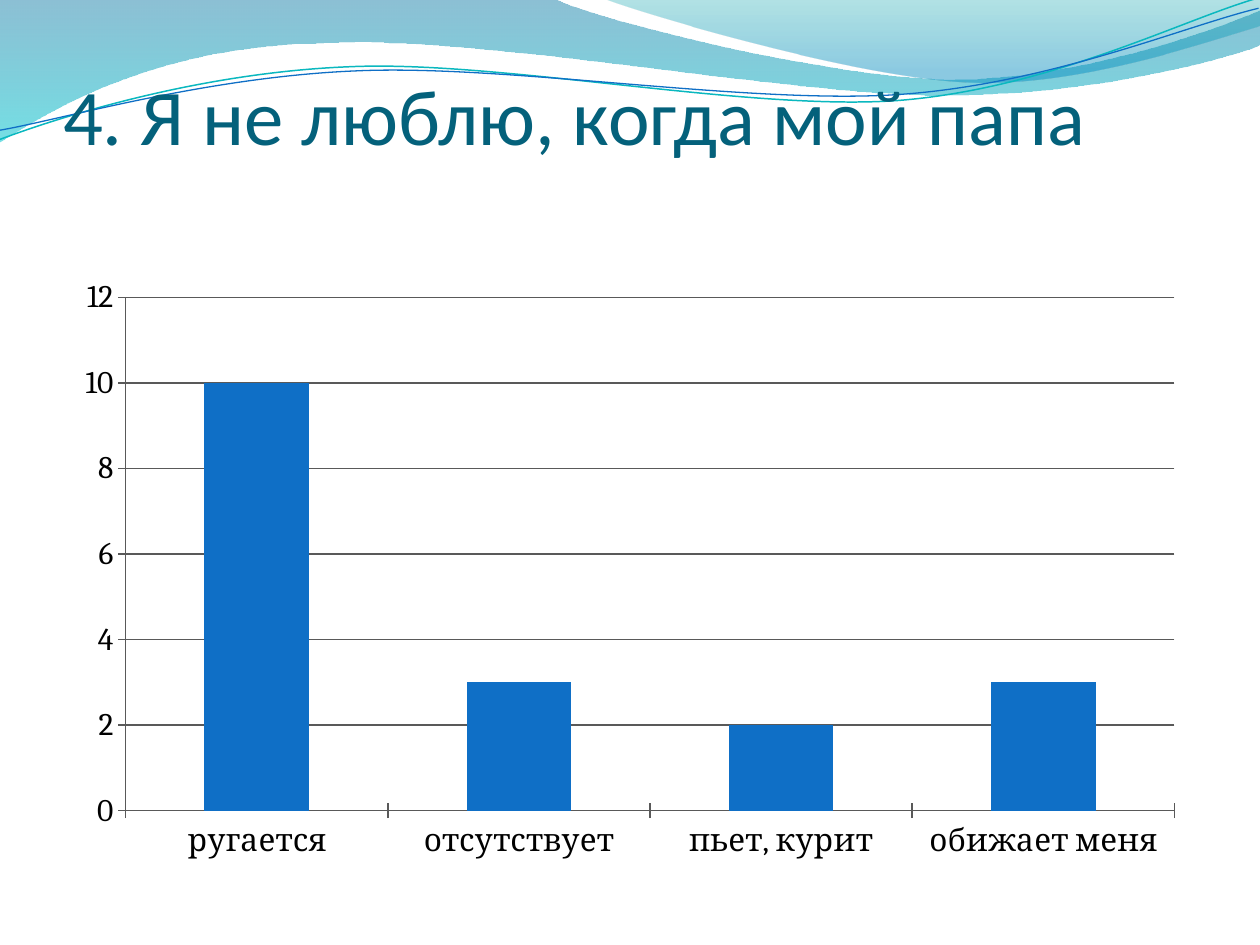
from math import cos, radians, sin

from lxml.etree import SubElement
from pptx import Presentation
from pptx.chart.data import CategoryChartData
from pptx.dml.color import RGBColor
from pptx.enum.chart import XL_CHART_TYPE as ChartType, XL_TICK_MARK as TickMark
from pptx.enum.text import MSO_ANCHOR as Anchor, MSO_AUTO_SIZE as AutoSize, PP_ALIGN as Align
from pptx.oxml.ns import qn
from pptx.util import Emu, Pt

EMU_PER_PX = 914400 / 126
SLIDE_WIDTH, SLIDE_HEIGHT = 1260, 945
CURVE_TILT = -2.7
COLORS = {
    "title": "04617B",
    "bar": "0F6FC6",
    "text": "000000",
    "grid": "595959",
    "deep_blue": "0074A1",
    "aqua": "00C6CF",
    "teal": "00A1A9",
    "blue": "008BBF",
    "teal_line": "0AB8BF",
    "blue_line": "0F6FC6",
}
LEFT_WAVE = [
    [(0, 0)], [(554, -1)],
    [(600, 21), (837, 79), (955, 79)], [(1075, 79), (1207, 33), (1260, 11)],
    [(1261, 45)],
    [(1239, 55), (1096, 96), (940, 95)], [(784, 95), (481, 35), (324, 43)],
    [(163, 45), (58, 105), (-1, 142)], [(0, 0)],
]
RIGHT_WAVE = [
    [(604, -1)], [(641, 14), (859, 78), (969, 82)],
    [(1079, 87), (1211, 40), (1260, 26)], [(1260, 0)], [(604, -1)],
]
TEAL_CURVE = [
    [(0, 140)], [(60, 117), (199, 72), (349, 66)],
    [(498, 59), (747, 112), (898, 101)], [(1050, 89), (1182, 19), (1257, -3)],
]
BLUE_CURVE = [
    [(0, 131)], [(59, 121), (207, 77), (357, 71)],
    [(508, 64), (752, 106), (903, 95)], [(1053, 84), (1186, 26), (1260, 8)],
]


def px(length):
    """Turn pixels into EMU."""
    return Emu(round(length * EMU_PER_PX))


def rgb(name):
    """Return a named colour."""
    return RGBColor.from_string(COLORS[name])


def place(shape, box):
    """Move and size a shape to a box."""
    shape.left, shape.top, shape.width, shape.height = map(px, box)


def turn(point, center, degrees):
    """Turn a point clockwise about a center."""
    angle = radians(degrees)
    x, y = point[0] - center[0], point[1] - center[1]
    return (center[0] + x * cos(angle) - y * sin(angle),
            center[1] + x * sin(angle) + y * cos(angle))


def bend(shape, segments):
    """Join each run of three line segments into one cubic curve."""
    lines = iter(list(shape._element.iter(qn("a:lnTo"))))
    for segment in segments:
        first, *others = [next(lines) for _ in segment]
        if others:
            curve = first.makeelement(qn("a:cubicBezTo"))
            first.addprevious(curve)
            for line in (first, *others):
                curve.append(line[0])
                line.getparent().remove(line)


def add_outline(slide, box, outline, close, rotation=0):
    """Add a freeform of straight and curved segments that fills the box."""
    left, top, width, height = box
    center = (left + width / 2, top + height / 2)
    points = [turn(point, center, -rotation) for segment in outline for point in segment]
    corners = [(px(x), px(y)) for x, y in points]
    builder = slide.shapes.build_freeform(*corners[0])
    builder.add_line_segments(corners[1:], close=close)
    shape = builder.convert_to_shape()
    bend(shape, outline[1:])
    place(shape, box)
    shape.rotation = rotation
    shape.shadow.inherit = False
    return shape


def add_wave(slide, box, outline, stops):
    """Add a wave with a translucent gradient running downwards."""
    shape = add_outline(slide, box, outline, True)
    shape.line.fill.background()
    shape.fill.gradient()
    shape.fill.gradient_angle = 270
    for stop, (position, color, _) in zip(shape.fill.gradient_stops, stops):
        stop.position = position
        stop.color.rgb = rgb(color)
    for element, (_, _, opacity) in zip(shape._element.spPr.iter(qn("a:srgbClr")), stops):
        SubElement(element, qn("a:alpha"), val=str(opacity * 1000))


def add_curve(slide, box, outline, color, width):
    """Add a thin open curve."""
    shape = add_outline(slide, box, outline, False, CURVE_TILT)
    shape.fill.background()
    shape.line.color.rgb = rgb(color)
    shape.line.width = Pt(width)


def add_header(slide):
    """Draw the waves and the thin curves across the top."""
    add_wave(slide, (-1, -1, 1262, 143), LEFT_WAVE, [(0, "deep_blue", 45), (1, "aqua", 55)])
    add_wave(slide, (604, -1, 656, 88), RIGHT_WAVE, [(0, "teal", 30), (0.8, "blue", 45)])
    add_curve(slide, (-3, 28, 1263, 89), TEAL_CURVE, "teal_line", 0.85)
    add_curve(slide, (-3, 38, 1264, 73), BLUE_CURVE, "blue_line", 0.75)


def add_title(slide, box):
    """Place the title in front of the waves."""
    title = slide.shapes.title
    place(title, box)
    slide.shapes._spTree.append(title._element)
    frame = title.text_frame
    frame.text = "4. Я не люблю, когда мой папа \v"
    frame.word_wrap = True
    frame.auto_size = AutoSize.NONE
    frame.vertical_anchor = Anchor.BOTTOM
    frame.margin_left = frame.margin_right = frame.margin_bottom = 0
    frame.margin_top = px(6)
    paragraph = frame.paragraphs[0]
    paragraph.alignment = Align.LEFT
    font = paragraph.runs[0].font
    font.name, font.size, font.color.rgb = "Calibri", Pt(45), rgb("title")


def add_answer_chart(slide, box):
    """Add the column chart of answers."""
    data = CategoryChartData()
    data.categories = ["ругается", "отсутствует", "пьет, курит", "обижает меня"]
    data.add_series("Series 1", (10, 3, 2, 3))
    chart = slide.shapes.add_chart(ChartType.COLUMN_CLUSTERED, *map(px, box), data).chart
    chart.has_legend = chart.has_title = False
    chart.font.name, chart.font.size = "Cambria", Pt(18)
    chart.font.color.rgb = rgb("text")
    plot = chart.plots[0]
    plot.gap_width = 150
    plot.vary_by_categories = False
    fill = plot.series[0].format.fill
    fill.solid()
    fill.fore_color.rgb = rgb("bar")
    category_axis, value_axis = chart.category_axis, chart.value_axis
    value_axis.has_major_gridlines = True
    for axis in (category_axis, value_axis):
        axis.major_tick_mark = TickMark.CROSS
    for part in (category_axis, value_axis, value_axis.major_gridlines):
        part.format.line.color.rgb = rgb("grid")
        part.format.line.width = Pt(0.75)


def main():
    """Build and save the slide."""
    presentation = Presentation()
    presentation.slide_width, presentation.slide_height = px(SLIDE_WIDTH), px(SLIDE_HEIGHT)
    slide = presentation.slides.add_slide(presentation.slide_layouts[5])
    add_header(slide)
    add_title(slide, (63, 97, 1134, 157))
    add_answer_chart(slide, (63, 267, 1134, 605))
    presentation.save("out.pptx")


if __name__ == "__main__":
    main()
